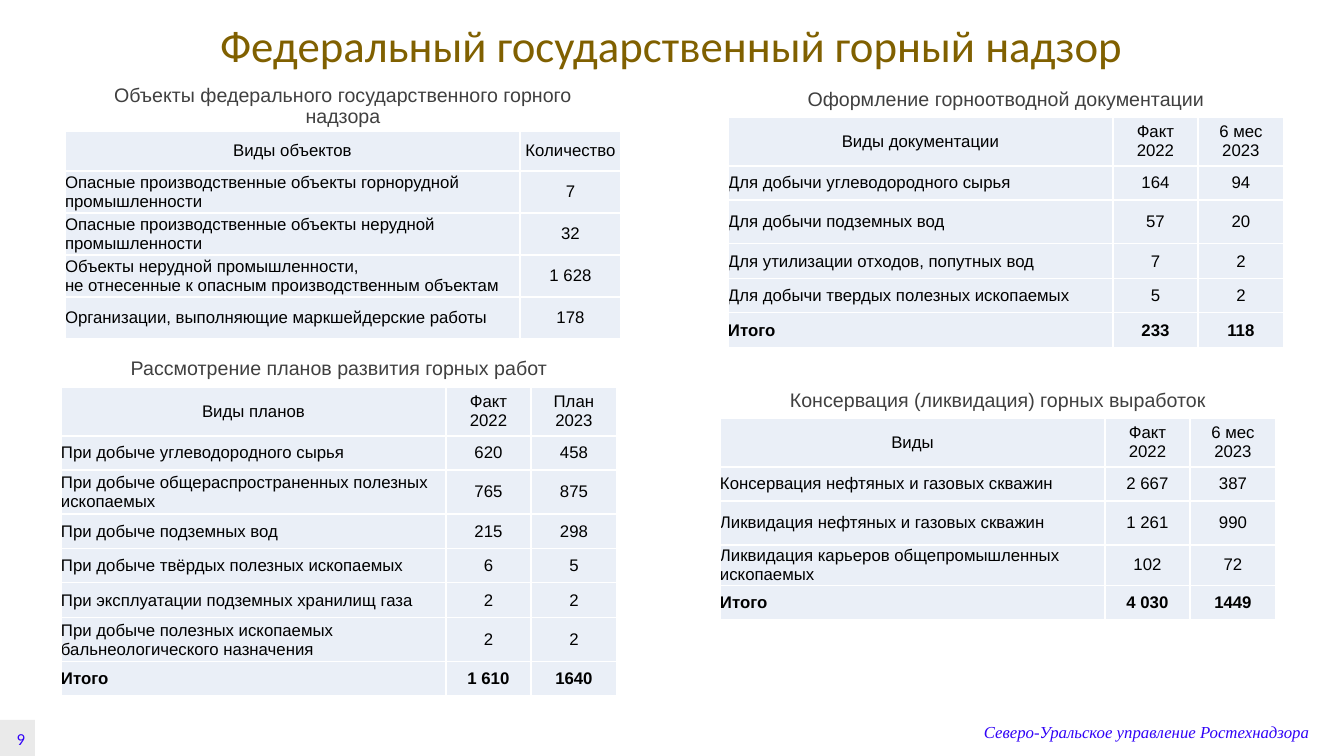
from pptx import Presentation
from pptx.dml.color import RGBColor
from pptx.enum.shapes import MSO_SHAPE as Shape
from pptx.enum.text import MSO_ANCHOR as Anchor, MSO_AUTO_SIZE as AutoSize, PP_ALIGN as Align
from pptx.oxml import parse_xml
from pptx.oxml.ns import nsdecls
from pptx.util import Emu, Pt

EMU_PER_PX = 914400 / 100.8
BLUE = "3103F7"


def px(length):
    return Emu(round(length * EMU_PER_PX))


def color(value):
    return RGBColor.from_string(value)


def write(frame, text, font="Arial", size=12, ink="000000", bold=False, italic=False,
          align=Align.LEFT, anchor=Anchor.MIDDLE, spacing=1.0):
    frame.word_wrap = True
    frame.vertical_anchor = anchor
    for index, line in enumerate(text.split("\n")):
        para = frame.add_paragraph() if index else frame.paragraphs[0]
        para.text = line
        para.alignment = align
        para.line_spacing = spacing
        for span in para.runs:
            span.font.name = font
            span.font.size = Pt(size)
            span.font.bold = bold
            span.font.italic = italic
            span.font.color.rgb = color(ink)


class SlideBuilder:
    cell_fill = "EAEFF7"
    border = "FFFFFF"
    heading_ink = "404040"

    def __init__(self, deck):
        self.page = deck.slides.add_slide(deck.slide_layouts[5])

    def title(self, text, left, top, width, height):
        box = self.page.shapes.title
        box.left, box.top, box.width, box.height = map(px, (left, top, width, height))
        box.text_frame.auto_size = AutoSize.NONE
        write(box.text_frame, text, font="Calibri", size=32, ink="806000",
              align=Align.CENTER, anchor=Anchor.BOTTOM, spacing=0.9)

    def text(self, text, left, top, width, height, **style):
        box = self.page.shapes.add_textbox(*map(px, (left, top, width, height)))
        write(box.text_frame, text, **style)

    def heading(self, text, left, top, width, height):
        self.text(text, left, top, width, height, size=14, ink=self.heading_ink,
                  align=Align.CENTER, anchor=Anchor.BOTTOM, spacing=0.9)

    def page_number(self, text, left, top, width, height):
        box = self.page.shapes.add_shape(Shape.RECTANGLE, *map(px, (left, top, width, height)))
        box.shadow.inherit = False
        box.fill.solid()
        box.fill.fore_color.rgb = color("EAEAEA")
        box.line.fill.background()
        write(box.text_frame, text, font="Calibri", ink=BLUE, align=Align.RIGHT)

    def cell(self, cell, text, **style):
        cell.margin_left = cell.margin_right = cell.margin_top = cell.margin_bottom = 0
        properties = cell._tc.get_or_add_tcPr()
        for side in ("lnL", "lnR", "lnT", "lnB"):
            properties.append(parse_xml(
                f'<a:{side} {nsdecls("a")} w="12700"><a:solidFill>'
                f'<a:srgbClr val="{self.border}"/></a:solidFill></a:{side}>'))
        cell.fill.solid()
        cell.fill.fore_color.rgb = color(self.cell_fill)
        write(cell.text_frame, text, **style)
        cell.vertical_anchor = Anchor.MIDDLE

    def table(self, rows, left, top, widths, heights):
        grid = self.page.shapes.add_table(
            len(rows), len(widths), px(left), px(top), px(sum(widths)), px(sum(heights))).table
        grid.first_row = grid.horz_banding = False
        for column, width in zip(grid.columns, widths):
            column.width = px(width)
        for row_index, (row, height) in enumerate(zip(rows, heights)):
            grid.rows[row_index].height = px(height)
            for column_index, text in enumerate(row):
                is_label = row_index > 0 and column_index == 0
                self.cell(grid.cell(row_index, column_index), text, bold=row[0] == "Итого",
                          align=Align.LEFT if is_label else Align.CENTER)


OBJECTS = [
    ("Виды объектов", "Количество"),
    ("Опасные производственные объекты горнорудной промышленности", "7"),
    ("Опасные производственные объекты нерудной промышленности", "32"),
    ("Объекты нерудной промышленности, \vне отнесенные к опасным производственным объектам", "1 628"),
    ("Организации, выполняющие маркшейдерские работы", "178"),
]
PLANS = [
    ("Виды планов", "Факт\n2022", "План\n2023"),
    ("При добыче углеводородного сырья", "620", "458"),
    ("При добыче общераспространенных полезных ископаемых", "765", "875"),
    ("При добыче подземных вод", "215", "298"),
    ("При добыче твёрдых полезных ископаемых", "6", "5"),
    ("При эксплуатации подземных хранилищ газа", "2", "2"),
    ("При добыче полезных ископаемых бальнеологического назначения", "2", "2"),
    ("Итого", "1 610", "1640"),
]
DOCUMENTS = [
    ("Виды документации", "Факт\n2022", "6 мес\n2023"),
    ("Для добычи углеводородного сырья", "164", "94"),
    ("Для добычи подземных вод", "57", "20"),
    ("Для утилизации отходов, попутных вод", "7", "2"),
    ("Для добычи твердых полезных ископаемых", "5", "2"),
    ("Итого", "233", "118"),
]
WORKINGS = [
    ("Виды", "Факт\n2022", "6 мес\n2023"),
    ("Консервация нефтяных и газовых скважин", "2 667", "387"),
    ("Ликвидация нефтяных и газовых скважин", "1 261", "990"),
    ("Ликвидация карьеров общепромышленных ископаемых", "102", "72"),
    ("Итого", "4 030", "1449"),
]
OBJECT_WIDTHS, OBJECT_HEIGHTS = (455, 101), (40, 42, 42, 42, 42)
YEAR_WIDTHS, YEAR_HEIGHTS = (385, 85, 86), (49, 34, 44, 35, 34, 35, 44, 34)

SECTIONS = [
    ("Объекты федерального государственного горного надзора", OBJECTS,
     65, 78, 55, 131, OBJECT_WIDTHS, OBJECT_HEIGHTS),
    ("Рассмотрение планов развития горных работ", PLANS,
     61, 354, 31, 387, YEAR_WIDTHS, YEAR_HEIGHTS),
    ("Оформление горноотводной документации", DOCUMENTS,
     728, 85, 31, 117, YEAR_WIDTHS, YEAR_HEIGHTS),
    ("Консервация (ликвидация) горных выработок", WORKINGS,
     720, 386, 31, 418, YEAR_WIDTHS, YEAR_HEIGHTS),
]


def main():
    deck = Presentation()
    deck.slide_width, deck.slide_height = px(1344), px(756)
    builder = SlideBuilder(deck)
    builder.title("Федеральный государственный горный надзор", 13, 23, 1317, 54)
    for name, rows, left, heading_top, heading_height, top, widths, heights in SECTIONS:
        builder.heading(name, left, heading_top, sum(widths), heading_height)
        builder.table(rows, left, top, widths, heights[:len(rows)])
    builder.text("Северо-Уральское управление Ростехнадзора", 974, 707, 355, 50,
                 font="Times New Roman", ink=BLUE, italic=True)
    builder.page_number("9", -1, 720, 36, 37)
    deck.save("out.pptx")


if __name__ == "__main__":
    main()
